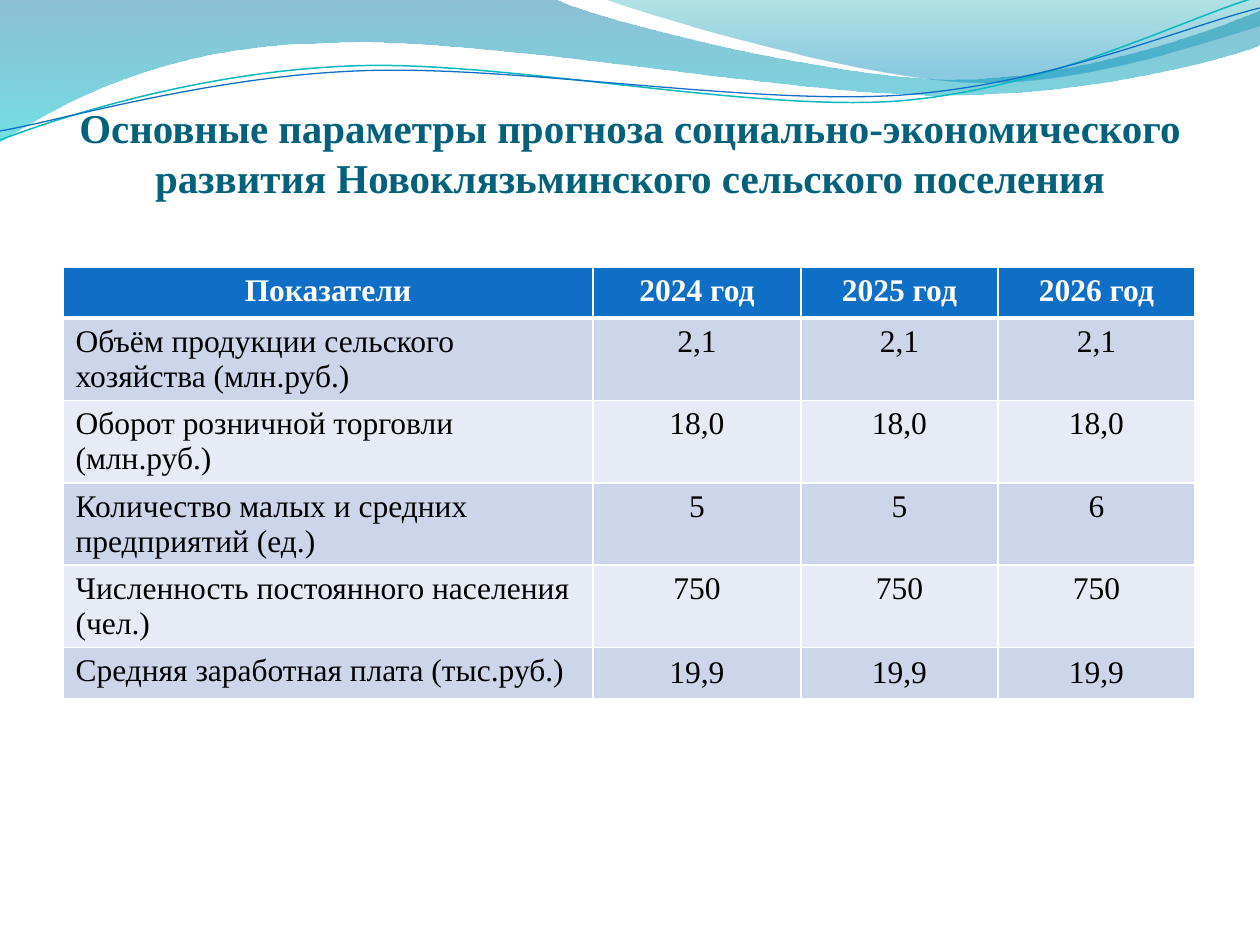
from lxml import etree
from pptx import Presentation
from pptx.dml.color import RGBColor
from pptx.enum import text
from pptx.oxml import ns
from pptx.util import Pt

PX = 914400 / 126
FONT = "Times New Roman"
COLORS = {
    "title": "04617B", "header": "0F6FC6", "odd": "CCD5EA", "even": "E7EBF5",
    "white": "FFFFFF", "black": "000000",
    "sea": "0074A1", "aqua": "00C6CF", "teal": "00A1A9", "sky": "008BBF",
    "thread": "0AB8BF",
}

TITLE = ("Основные параметры прогноза социально-экономического "
         "развития Новоклязьминского сельского поселения")
ROWS = [
    ("Показатели", "2024 год", "2025 год", "2026 год"),
    ("Объём продукции сельского хозяйства (млн.руб.)", "2,1", "2,1", "2,1"),
    ("Оборот розничной торговли (млн.руб.)", "18,0", "18,0", "18,0"),
    ("Количество малых и средних предприятий (ед.)", "5", "5", "6"),
    ("Численность постоянного населения (чел.)", "750", "750", "750"),
    ("Средняя заработная плата (тыс.руб.)", "19,9", "19,9", "19,9"),
]
COLUMN_WIDTHS = [530, 208, 197, 197]
ROW_HEIGHT = 51  # rows with two lines grow

# Outlines: a pair is a corner, a triple of pairs is a Bezier segment.
# Gradient stops: position, colour, opacity in percent.
WAVES = [
    ([(-1, -1), (554, -1),
      ((600, 21), (837, 79), (955, 79)), ((1075, 79), (1207, 33), (1260, 11)),
      (1261, 45),
      ((1239, 55), (1096, 96), (940, 95)), ((784, 95), (481, 35), (324, 43)),
      ((163, 45), (58, 105), (-1, 142))],
     [(0, "sea", 45), (1, "aqua", 55)]),
    ([(604, -1),
      ((641, 14), (859, 78), (969, 82)), ((1079, 87), (1211, 40), (1260, 26)),
      (1260, -1)],
     [(0, "teal", 30), (0.8, "sky", 45)]),
]
THREADS = [
    ([(0, 140), ((60, 117), (199, 72), (349, 66)),
      ((498, 59), (747, 112), (898, 101)), ((1049, 89), (1182, 19), (1257, -3))],
     "thread", 0.85),
    ([(0, 131), ((59, 121), (207, 77), (357, 71)),
      ((508, 64), (752, 106), (903, 95)), ((1053, 84), (1186, 26), (1260, 8))],
     "header", 0.75),
]


def px(value):
    return round(value * PX)


def rgb(name):
    return RGBColor.from_string(COLORS[name])


def add_outline(slide, outline, close):
    """Draw the points as lines, then join each triple into one Bezier segment."""
    parts = [part if len(part) == 3 else (part,) for part in outline]
    points = [(px(x), px(y)) for part in parts for x, y in part]
    builder = slide.shapes.build_freeform(*points[0])
    builder.add_line_segments(points[1:], close=close)
    shape = builder.convert_to_shape()
    shape.shadow.inherit = False

    lines = shape.element.spPr.iter(ns.qn("a:lnTo"))
    lines = iter(list(lines))
    for part in parts[1:]:
        segment = next(lines)
        if len(part) == 3:
            segment.tag = ns.qn("a:cubicBezTo")
            for _ in range(2):
                following = next(lines)
                segment.append(following[0])
                following.getparent().remove(following)
    return shape


def add_wave(slide, outline, stops):
    shape = add_outline(slide, outline, True)
    shape.line.fill.background()
    shape.fill.gradient()
    shape.fill.gradient_angle = 270
    for stop, (position, color, _) in zip(shape.fill.gradient_stops, stops):
        stop.position = position
        stop.color.rgb = rgb(color)
    tags = shape.element.spPr.iter(ns.qn("a:srgbClr"))
    for tag, (_, _, opacity) in zip(tags, stops):
        etree.SubElement(tag, ns.qn("a:alpha"), val=str(opacity * 1000))


def add_thread(slide, outline, color, width):
    shape = add_outline(slide, outline, False)
    shape.fill.background()
    shape.line.color.rgb = rgb(color)
    shape.line.width = Pt(width)


def add_title(slide):
    title = slide.shapes.title
    title.left, title.top, title.width, title.height = map(px, (63, 97, 1134, 157))
    frame = title.text_frame
    frame.text = TITLE
    frame.word_wrap = True
    frame.auto_size = text.MSO_AUTO_SIZE.NONE
    frame.vertical_anchor = text.MSO_ANCHOR.TOP
    frame.margin_left = frame.margin_right = frame.margin_bottom = 0
    frame.margin_top = px(6)
    format_paragraph(frame.paragraphs[0], 23.4, "title", True, True)
    title.element.getparent().append(title.element)  # in front of the waves


def format_paragraph(paragraph, size, color, bold, centred):
    paragraph.alignment = text.PP_ALIGN.CENTER if centred else text.PP_ALIGN.LEFT
    font = paragraph.font
    font.name, font.size, font.bold = FONT, Pt(size), bold
    font.color.rgb = rgb(color)


def set_borders(cell, widths):
    properties = cell._tc.get_or_add_tcPr()
    for index, (side, width) in enumerate(widths.items()):
        line = etree.Element(ns.qn(f"a:ln{side}"), w=str(Pt(width)))
        fill = etree.SubElement(line, ns.qn("a:solidFill"))
        etree.SubElement(fill, ns.qn("a:srgbClr"), val=COLORS["white"])
        properties.insert(index, line)


def add_table(slide):
    table = slide.shapes.add_table(
        len(ROWS), len(COLUMN_WIDTHS), px(63), px(267),
        px(sum(COLUMN_WIDTHS)), px(ROW_HEIGHT * len(ROWS))).table
    for column, width in zip(table.columns, COLUMN_WIDTHS):
        column.width = px(width)
    for r, values in enumerate(ROWS):
        table.rows[r].height = px(ROW_HEIGHT)
        header = r == 0
        background = "header" if header else ("even", "odd")[r % 2]
        for c, value in enumerate(values):
            cell = table.cell(r, c)
            cell.text = value
            cell.fill.solid()
            cell.fill.fore_color.rgb = rgb(background)
            format_paragraph(cell.text_frame.paragraphs[0], 18,
                             "white" if header else "black", header, header or c > 0)
            set_borders(cell, {"L": 1, "R": 1, "T": 3 if r == 1 else 1,
                               "B": 3 if header else 1})
            if r == len(ROWS) - 1 and c > 0:
                cell.vertical_anchor = text.MSO_ANCHOR.MIDDLE
                cell.margin_left = cell.margin_right = 0
                cell.margin_top = cell.margin_bottom = 0


def main():
    presentation = Presentation()
    presentation.slide_width, presentation.slide_height = px(1260), px(945)
    slide = presentation.slides.add_slide(presentation.slide_layouts[5])
    for wave in WAVES:
        add_wave(slide, *wave)
    for thread in THREADS:
        add_thread(slide, *thread)
    add_title(slide)
    add_table(slide)
    presentation.save("out.pptx")


if __name__ == "__main__":
    main()
